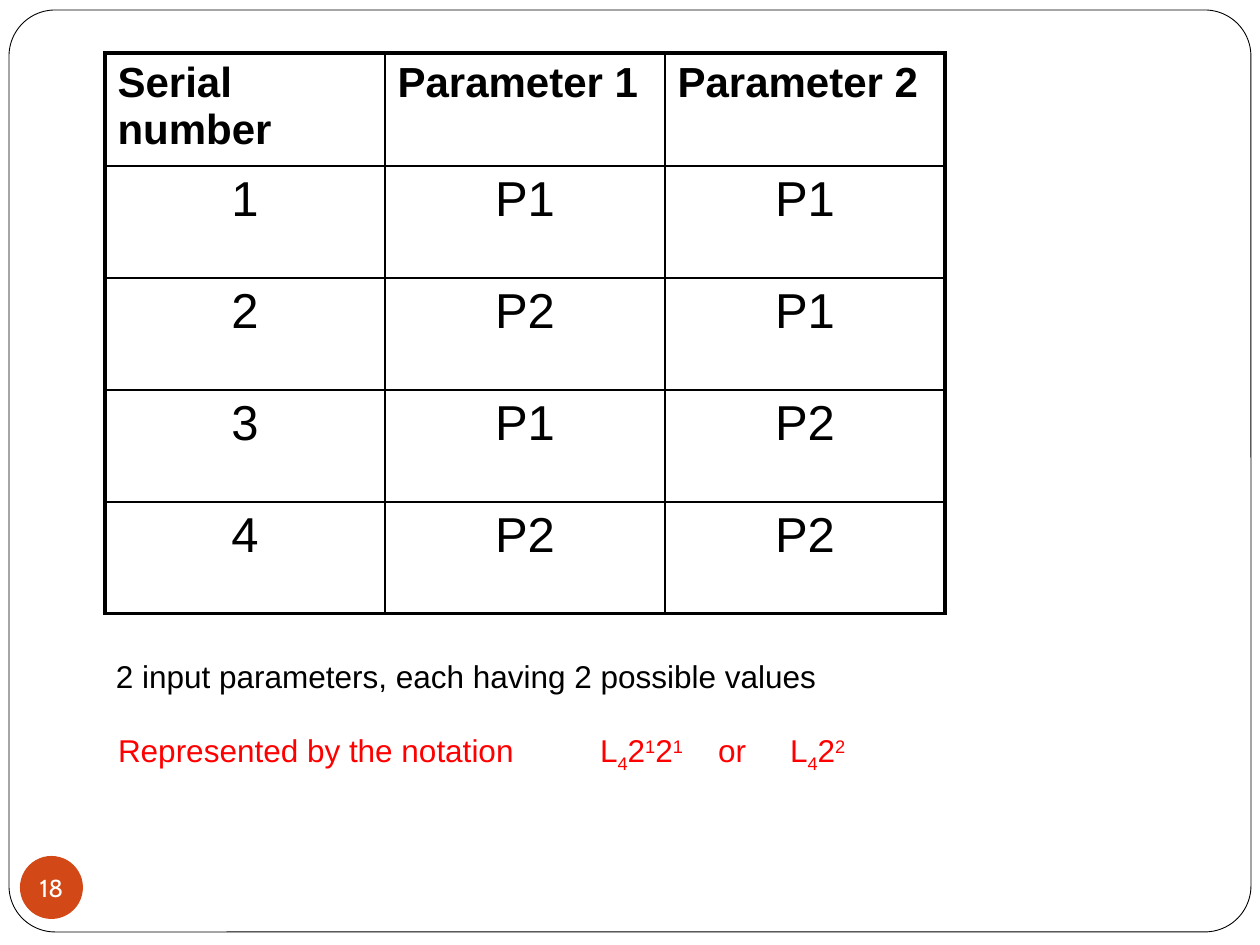
"""Build a slide with an orthogonal array table and its notation."""
from typing import NamedTuple

from lxml import etree
from pptx import Presentation
from pptx.dml.color import RGBColor
from pptx.enum.shapes import MSO_SHAPE
from pptx.enum.text import MSO_ANCHOR, PP_ALIGN
from pptx.oxml.ns import qn
from pptx.util import Emu, Pt

ROUND, OVAL = MSO_SHAPE.ROUNDED_RECTANGLE, MSO_SHAPE.OVAL
LEFT, CENTER = PP_ALIGN.LEFT, PP_ALIGN.CENTER
MIDDLE = MSO_ANCHOR.MIDDLE
DPI = 126
BLACK, WHITE, RED, RUST = "000000", "FFFFFF", "FF0000", "D34817"
THIN, THICK = 1, 2.25
SUB, SUPER = -25, 30
GRID = [
    ("Serial number", "Parameter 1", "Parameter 2"),
    ("1", "P1", "P1"),
    ("2", "P2", "P1"),
    ("3", "P1", "P2"),
    ("4", "P2", "P2"),
]


class Box(NamedTuple):
    """A place on the slide in px."""
    x: int
    y: int
    w: int
    h: int


class Piece(NamedTuple):
    """A piece of text with its baseline shift in percent."""
    text: str
    base: int = 0


class Note(NamedTuple):
    """A line of text under the table."""
    box: Box
    inset: int
    color: str
    words: list[Piece]
    tabs: tuple[int, ...] = ()


NOTES = [
    Note(Box(94, 651, 1081, 50), 22, BLACK,
         [Piece("2 input parameters, each having 2 possible values")]),
    Note(Box(105, 725, 987, 50), 13, RED,
         [Piece("Represented by the notation\tL"), Piece("4", SUB),
          Piece("2"), Piece("1", SUPER), Piece("2"), Piece("1", SUPER),
          Piece("\tor\tL"), Piece("4", SUB), Piece("2"), Piece("2", SUPER)],
         (482, 600, 672)),
]


def px(size: int) -> Emu:
    """Turn px into EMU."""
    return Emu(round(size * 914400 / DPI))


def place(box: Box) -> list[Emu]:
    """Turn a box into EMU lengths."""
    return [px(size) for size in box]


def rgb(code: str) -> RGBColor:
    """Turn a hex string into a colour."""
    return RGBColor.from_string(code)


def style(run, size: int, color: str, face: str = "Arial", bold: bool = False) -> None:
    """Set the font of a run."""
    font = run.font
    font.size, font.name, font.bold = Pt(size), face, bold
    font.color.rgb = rgb(color)


def add_shape(slide, kind, box: Box, fill: str):
    """Add a filled preset shape without a shadow."""
    shape = slide.shapes.add_shape(kind, *place(box))
    shape.shadow.inherit = False
    shape.fill.solid()
    shape.fill.fore_color.rgb = rgb(fill)
    return shape


def add_frame(slide) -> None:
    """Add the rounded border of the slide."""
    frame = add_shape(slide, ROUND, Box(9, 10, 1242, 922), WHITE)
    frame.adjustments[0] = 0.05
    frame.line.color.rgb = rgb(BLACK)
    frame.line.width = Pt(0.5)


def add_border(cell, side: str, width: float) -> None:
    """Draw one side of a cell."""
    line = etree.SubElement(cell._tc.get_or_add_tcPr(), qn(f"a:ln{side}"), w=str(Pt(width)))
    fill = etree.SubElement(line, qn("a:solidFill"))
    etree.SubElement(fill, qn("a:srgbClr"), val=BLACK)


def add_grid(slide) -> None:
    """Add the table with a thick outline and thin inner lines."""
    rows, cols = len(GRID), len(GRID[0])
    table = slide.shapes.add_table(rows, cols, *place(Box(105, 53, 840, 561))).table
    table.first_row = table.horz_banding = False
    for col in table.columns:
        col.width = px(280)
    for r, words in enumerate(GRID):
        head = r == 0
        table.rows[r].height = px(113 if head else 112)
        for c, word in enumerate(words):
            cell = table.cell(r, c)
            edges = {"L": c == 0, "R": c == cols - 1, "T": head, "B": r == rows - 1}
            for side, outer in edges.items():
                add_border(cell, side, THICK if outer else THIN)
            cell.fill.background()
            para = cell.text_frame.paragraphs[0]
            para.text = word
            para.alignment = LEFT if head else CENTER
            style(para.runs[0], 24 if head else 28, BLACK, bold=head)


def add_note(slide, note: Note) -> None:
    """Add a line of text with shifted pieces and tab stops."""
    frame = slide.shapes.add_textbox(*place(note.box)).text_frame
    frame.word_wrap = True
    frame.margin_left = px(note.inset)
    para = frame.paragraphs[0]
    if note.tabs:
        stops = etree.SubElement(para._p.get_or_add_pPr(), qn("a:tabLst"))
        for stop in note.tabs:
            etree.SubElement(stops, qn("a:tab"), pos=str(px(stop)), algn="l")
    for piece in note.words:
        run = para.add_run()
        run.text = piece.text
        style(run, 18, note.color)
        if piece.base:
            run._r.get_or_add_rPr().set("baseline", str(piece.base * 1000))


def add_badge(slide) -> None:
    """Add the slide number in its disc."""
    badge = add_shape(slide, OVAL, Box(20, 856, 63, 63), RUST)
    badge.line.fill.background()
    frame = badge.text_frame
    frame.margin_left = frame.margin_right = frame.margin_top = frame.margin_bottom = 0
    frame.word_wrap = False
    frame.vertical_anchor = MIDDLE
    frame.text = "18"
    para = frame.paragraphs[0]
    para.alignment = CENTER
    style(para.runs[0], 14, WHITE, "Cabin")


def main() -> None:
    """Build and save the slide."""
    deck = Presentation()
    deck.slide_width, deck.slide_height = px(1260), px(945)
    slide = deck.slides.add_slide(deck.slide_layouts[6])
    add_frame(slide)
    add_grid(slide)
    for note in NOTES:
        add_note(slide, note)
    add_badge(slide)
    deck.save("out.pptx")


if __name__ == "__main__":
    main()
